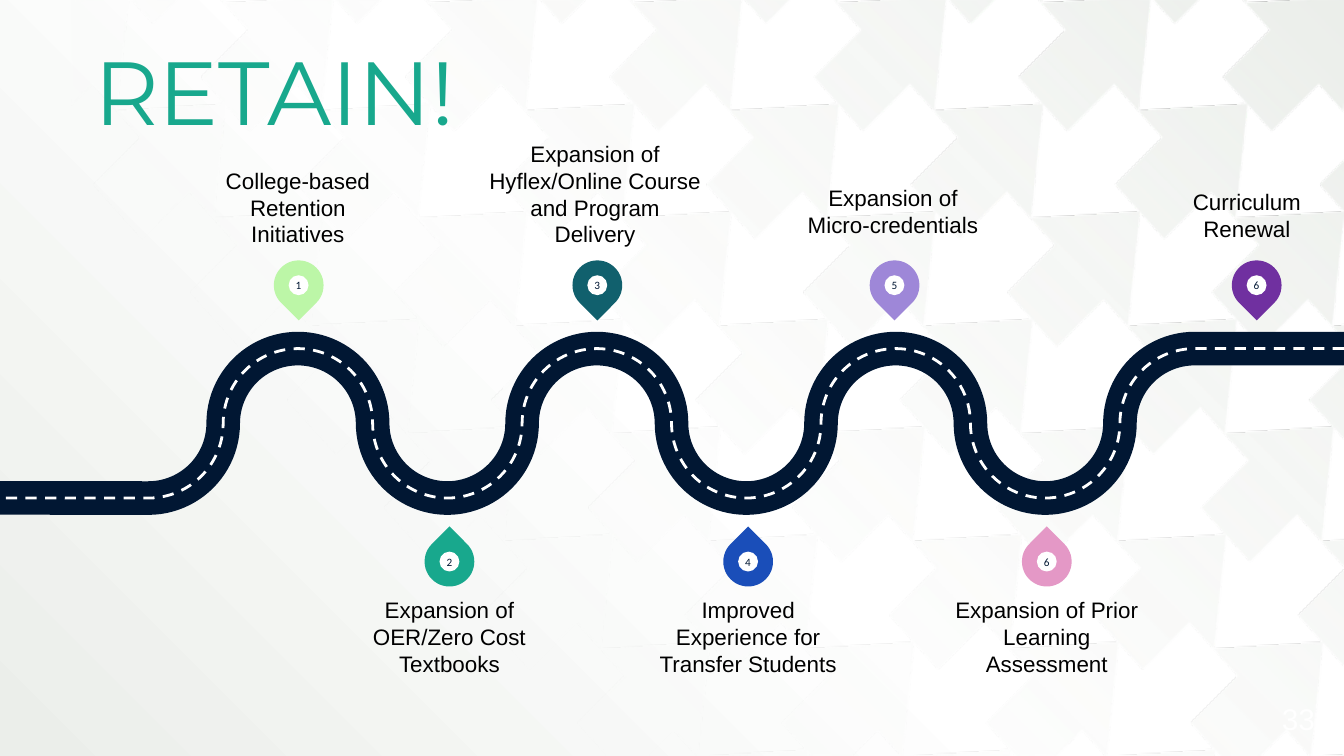
from lxml.etree import SubElement
from pptx import Presentation
from pptx.dml.color import RGBColor
from pptx.enum.dml import MSO_LINE
from pptx.enum.shapes import MSO_SHAPE
from pptx.enum.text import MSO_ANCHOR, PP_ALIGN
from pptx.oxml import parse_xml
from pptx.oxml.ns import nsdecls, qn
from pptx.util import Inches, Pt

W, H = 10, 5.625
COL, ROW = W / 18, H / 18
UNITS = 1000
ARROW = [(0, 0), (0.18, 0.2), (-0.17, 0.55), (0.19, 0.95),
         (0.54, 0.6), (0.72, 0.8), (0.81, -0.05)]
UPPER = [
    ("1", "BCF6A7", 4, "College-based Retention Initiatives", 3.99, 5.89, 1.41),
    ("3", "11606D", 8, "Expansion of Hyflex/Online Course and Program Delivery", 7.97, 5.89, 1.61),
    ("5", "9E87D8", 11.98, "Expansion of Micro-credentials", 11.96, 5.66, 1.41),
    ("6", "7030A0", 16.83, "Curriculum Renewal", 16.7, 5.76, 1.41),
]
LOWER = [
    ("2", "18A88D", 6.02, "Expansion of OER/Zero Cost Textbooks"),
    ("4", "1A4EB9", 10.02, "Improved Experience for Transfer Students"),
    ("6", "E498C6", 14.02, "Expansion of Prior Learning Assessment"),
]


def color(value):
    return RGBColor.from_string(value)


def gradient(stops, direction):
    stop_xml = "".join(
        f'<a:gs pos="{pos * 1000}"><a:srgbClr val="{rgb}">'
        f'<a:alpha val="{alpha * 1000}"/></a:srgbClr></a:gs>'
        for pos, rgb, alpha in stops)
    return parse_xml(f'<a:gradFill {nsdecls("a")} rotWithShape="1">'
                     f'<a:gsLst>{stop_xml}</a:gsLst>{direction}</a:gradFill>')


def replace_fill(props, grad):
    props.replace(props.find(qn("a:solidFill")), grad)


def freeform(shapes, outlines, close):
    scaled = [[(x * UNITS, y * UNITS) for x, y in outline] for outline in outlines]
    fb = shapes.build_freeform(*scaled[0][0], scale=Inches(1) / UNITS)
    for index, points in enumerate(scaled):
        if index:
            fb.move_to(*points[0])
        fb.add_line_segments(points[1:], close=close)
    sp = fb.convert_to_shape()
    sp.shadow.inherit = False
    return sp


def clip(points, axis, limit, side):
    kept = []
    for a, b in zip(points, points[1:] + points[:1]):
        da, db = side * (a[axis] - limit), side * (b[axis] - limit)
        if da >= 0:
            kept.append(a)
        if da * db < 0:
            t = da / (da - db)
            kept.append(tuple(m + t * (n - m) for m, n in zip(a, b)))
    return kept


def add_backdrop(s, left, top, width, height):
    s.background.fill.solid()
    replace_fill(s.element.xpath(".//p:bgPr")[0], gradient(
        [(0, "FFFFFF", 100), (50, "FFFFFF", 100), (100, "EBEEEA", 100)],
        '<a:path path="circle"><a:fillToRect l="100000" b="100000"/></a:path>'))
    edges = [(0, left, 1), (0, left + width, -1), (1, top, 1), (1, top + height, -1)]
    tiles = []
    for row in range(-2, 7):
        for column in range(7):
            x = left + 0.34 + 1.52 * column + 0.72 * row
            y = top + 0.83 + 0.8 * row
            tile = [(x + dx, y + dy) for dx, dy in ARROW]
            for edge in edges:
                tile = clip(tile, *edge)
            if len(tile) > 2:
                tiles.append(tile)
    sp = freeform(s.shapes, tiles, True)
    sp.fill.solid()
    replace_fill(sp.element.spPr, gradient(
        [(0, "EBEEEA", 100), (80, "FFFFFF", 0), (100, "FFFFFF", 0)],
        '<a:lin ang="8100000" scaled="0"/>'))
    sp.line.fill.background()


def set_text(sp, text, size, font, rgb, align, anchor):
    tf = sp.text_frame
    tf.margin_left = tf.margin_right = tf.margin_top = tf.margin_bottom = 0
    tf.word_wrap = True
    tf.vertical_anchor = anchor
    tf.text = text
    p = tf.paragraphs[0]
    p.alignment = align
    r = p.runs[0]
    r.font.size = Pt(size)
    r.font.name = font
    r.font.color.rgb = color(rgb)
    return p


def add_text(s, left, top, width, height, text, size=12, font="Arial", rgb="000000",
             align=PP_ALIGN.CENTER, anchor=MSO_ANCHOR.TOP):
    sp = s.shapes.add_textbox(Inches(left), Inches(top), Inches(width), Inches(height))
    return set_text(sp, text, size, font, rgb, align, anchor)


def bend(segment, radius, start, sweep):
    arc = SubElement(segment.getparent(), qn("a:arcTo"))
    arc.set("wR", str(round(radius * UNITS)))
    arc.set("hR", str(round(radius * UNITS)))
    arc.set("stAng", str(start * 60000))
    arc.set("swAng", str(sweep * 60000))
    segment.getparent().replace(segment, arc)


def add_road(s, left, top, width):
    radius = width / 18
    middle, bottom = top + radius, top + 2 * radius
    points = [(left + width, top), (left + 16 * radius, top)]
    points += [(left + step * radius, middle) for step in range(15, 2, -2)]
    points += [(left + 2 * radius, bottom), (left, bottom)]
    turns = [(270, -90)] + [(0, 180), (0, -180)] * 3 + [(0, 90)]
    for rgb, weight, dash in (("011733", 18, None), ("FFFFFF", 1.5, MSO_LINE.DASH)):
        sp = freeform(s.shapes, [points], False)
        for segment, turn in zip(sp.element.xpath(".//a:lnTo")[1:-1], turns):
            bend(segment, radius, *turn)
        sp.fill.background()
        sp.line.color.rgb = color(rgb)
        sp.line.width = Pt(weight)
        if dash:
            sp.line.dash_style = dash


def add_pin(s, center, top, size, number, rgb, rotation):
    group = s.shapes.add_group_shape()
    middle = top + size / 2
    for kind, side, fill in ((MSO_SHAPE.TEAR, size, rgb),
                             (MSO_SHAPE.OVAL, 0.4 * size, "FFFFFF")):
        sp = group.shapes.add_shape(kind, Inches(center - side / 2), Inches(middle - side / 2),
                                    Inches(side), Inches(side))
        sp.shadow.inherit = False
        sp.fill.solid()
        sp.fill.fore_color.rgb = color(fill)
        sp.line.fill.background()
        if kind == MSO_SHAPE.TEAR:
            sp.rotation = rotation
    set_text(sp, number, 6, "Calibri", "011733", PP_ALIGN.CENTER, MSO_ANCHOR.MIDDLE)


def add_upper_stops(s, pin_top, size):
    for number, rgb, pin_col, text, text_col, bottom, width in UPPER:
        add_pin(s, pin_col * COL, pin_top, size, number, rgb, 135)
        add_text(s, text_col * COL - width / 2, (bottom - 1.5) * ROW, width, 1.5 * ROW,
                 text, anchor=MSO_ANCHOR.BOTTOM)


def add_lower_stops(s, pin_top, size, text_top, width):
    for number, rgb, col, text in LOWER:
        add_pin(s, col * COL, pin_top, size, number, rgb, 315)
        add_text(s, col * COL - width / 2, text_top, width, 1.12 * ROW, text)


def main():
    prs = Presentation()
    prs.slide_width, prs.slide_height = Inches(W), Inches(H)
    s = prs.slides.add_slide(prs.slide_layouts[6])
    add_backdrop(s, 0.53, 0, W - 0.53, H)
    title = add_text(s, 1.26 * COL, 1.15 * ROW, 12 * COL, 1.5 * ROW, "RETAIN!",
                     48, "Montserrat", "18A88D", PP_ALIGN.LEFT)
    title.line_spacing = 0.9
    add_road(s, 0, 8.3 * ROW, W)
    add_upper_stops(s, 6.2 * ROW, 0.37)
    add_lower_stops(s, 12.78 * ROW, 0.37, 14.2 * ROW, 1.41)
    add_text(s, 16 * COL, 16.6 * ROW, 1.61 * COL, ROW, "33", 16, "Arial", "FFFFFF",
             PP_ALIGN.RIGHT, MSO_ANCHOR.MIDDLE)
    prs.save("out.pptx")


if __name__ == "__main__":
    main()
